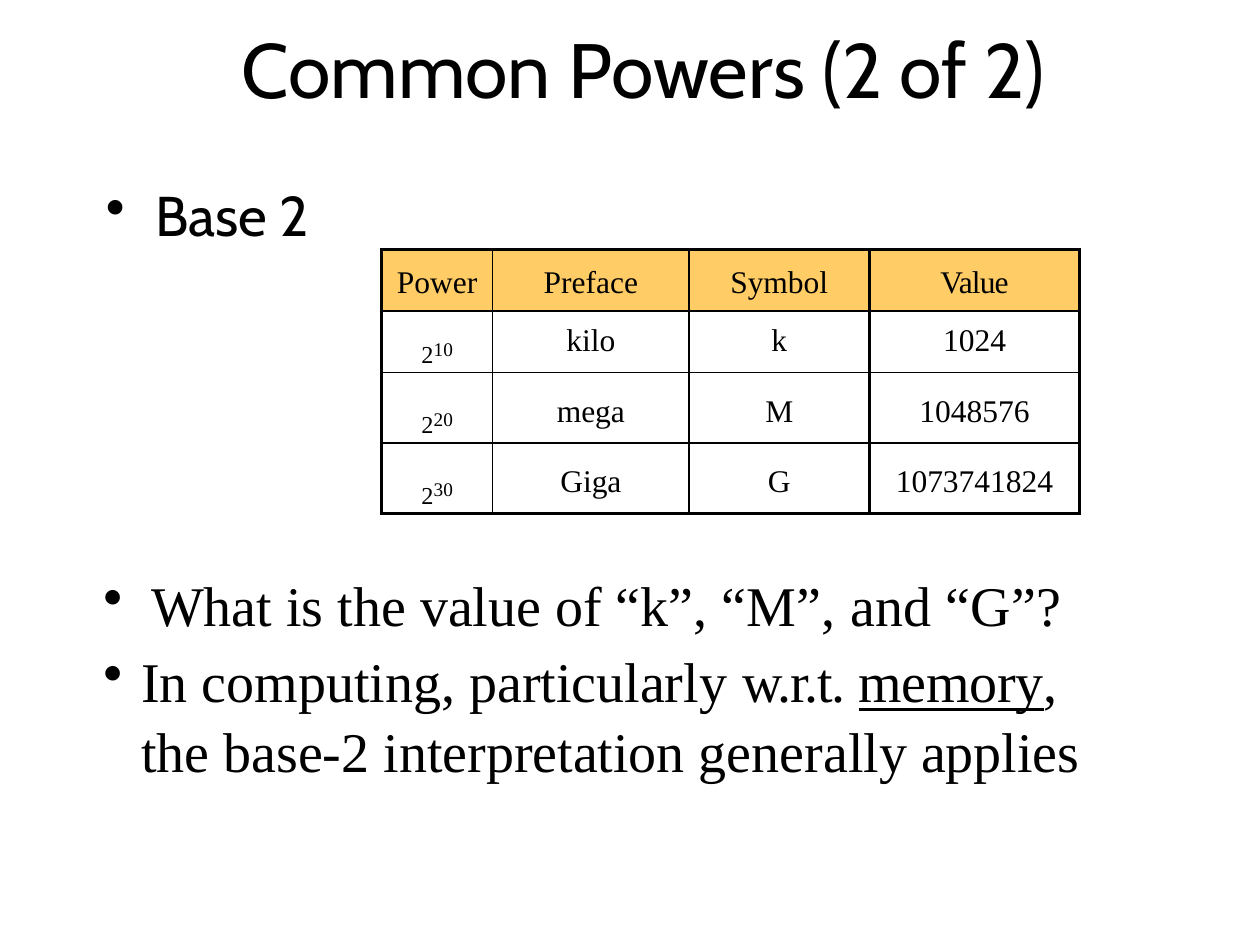
from lxml import etree
from pptx import Presentation
from pptx.dml.color import RGBColor
from pptx.enum.text import PP_ALIGN
from pptx.oxml.ns import qn
from pptx.util import Inches, Pt

CENTER = PP_ALIGN.CENTER
BLACK = RGBColor(0, 0, 0)
GOLD = RGBColor(0xFF, 0xCC, 0x66)
SANS, SERIF = "Cabin", "Times New Roman"
THIN, THICK = Pt(1), Pt(2.25)

deck = Presentation()
deck.slide_width, deck.slide_height = Inches(10), Inches(7.5)
slide = deck.slides.add_slide(deck.slide_layouts[6])


def write(para, parts, size, face, before):
    """Fill a paragraph with (words, letter spacing) parts."""
    para.space_before = Pt(before)
    for words, gap in parts:
        run = para.add_run()
        run.text = words
        font = run.font
        font.size, font.name, font.color.rgb = Pt(size), face, BLACK
        run._r.get_or_add_rPr().set("spc", str(round(gap * 100)))


def line(cell, tag, width):
    """Draw one black border of a cell."""
    edge = etree.SubElement(cell._tc.get_or_add_tcPr(), qn(tag), w=str(width))
    fill = etree.SubElement(edge, qn("a:solidFill"))
    etree.SubElement(fill, qn("a:srgbClr"), val=str(BLACK))


# Box place, top inset, face, size, then paragraphs:
# space before, left indent, bullet or not, parts
boxes = [
    ((1.91, 0.16, 7.01, 0.76), 0.01, SANS, 44, [
        (1, 0.01, False, [("Common Powers ", 0), ("(2 of ", -0.1), ("2)", 0)])]),
    ((0.84, 1.42, 1.91, 0.56), 0.01, SANS, 32, [
        (1.1, 0.39, True, [("Base 2", 0)])]),
    ((0.82, 4.47, 7.84, 1.73), 0.06, SERIF, 32, [
        (4.6, 0.38, True, [("What is the value of “k”, “M”, ", 0),
                           ("and ", 0.1), ("“G”?", 0)]),
        (3.6, 0.3, True, [("In computing, particularly ", 0), ("w.r.t. ", -0.7),
                          ("memory", -0.2), (", ", -0.2),
                          ("the base-2 interpretation generally applies", 0)])]),
]
for place, inset, face, size, paras in boxes:
    frame = slide.shapes.add_textbox(*map(Inches, place)).text_frame
    frame.word_wrap = True
    frame.margin_left = frame.margin_right = frame.margin_bottom = 0
    frame.margin_top = Inches(inset)
    for i, (before, left, dot, parts) in enumerate(paras):
        para = frame.add_paragraph() if i else frame.paragraphs[0]
        write(para, parts, size, face, before)
        props = para._p.get_or_add_pPr()
        props.set("marL", str(Inches(left)))
        if dot:
            props.set("indent", str(-Inches(left)))
            etree.SubElement(props, qn("a:buChar"), char="•")

# The last box ends with the two-line point
para.line_spacing = 1.04
para.runs[2].font.underline = True

cols = [0.88, 1.56, 1.43, 1.67]
rows = [0.49, 0.46, 0.52, 0.53]
words = [
    ["Power", "Preface", "Symbol", "Value"],
    ["10", "kilo", "k", "1024"],
    ["20", "mega", "M", "1048576"],
    ["30", "Giga", "G", "1073741824"],
]
# Top inset and space before: first column, then the others
pads = [
    ((0.13, 9.6), (0.13, 9.6)),
    ((0.06, 4.5), (0.1, 7.2)),
    ((0.13, 9.3), (0.17, 12)),
    ((0.13, 9.4), (0.17, 12.1)),
]
table = slide.shapes.add_table(
    len(rows), len(cols), Inches(3.03), Inches(1.98),
    Inches(sum(cols)), Inches(sum(rows))).table
table.first_row = table.horz_banding = False
for col, width in zip(table.columns, cols):
    col.width = Inches(width)
for row, height in zip(table.rows, rows):
    row.height = Inches(height)

for r, texts in enumerate(words):
    for c, text in enumerate(texts):
        cell = table.cell(r, c)
        inset, before = pads[r][c > 0]
        cell.margin_left = cell.margin_right = cell.margin_bottom = 0
        cell.margin_top = Inches(inset)
        line(cell, "a:lnL", THICK if c in (0, 3) else THIN)
        line(cell, "a:lnR", THICK if c in (2, 3) else THIN)
        line(cell, "a:lnT", THICK if r == 0 else THIN)
        line(cell, "a:lnB", THICK if r == 3 else THIN)
        if r == 0:
            cell.fill.solid()
            cell.fill.fore_color.rgb = GOLD
        else:
            cell.fill.background()
        para = cell.text_frame.paragraphs[0]
        para.alignment = CENTER
        if r and c == 0:
            write(para, [("2", 0.1), (text, 0.1)], 24, SERIF, before)
            base, power = para.runs
            base._r.get_or_add_rPr().set("baseline", "-17000")
            power.font.size = Pt(11)
        else:
            gap = -0.5 if text == "Value" else 0
            write(para, [(text, gap)], 18, SERIF, before)

deck.save("out.pptx")
